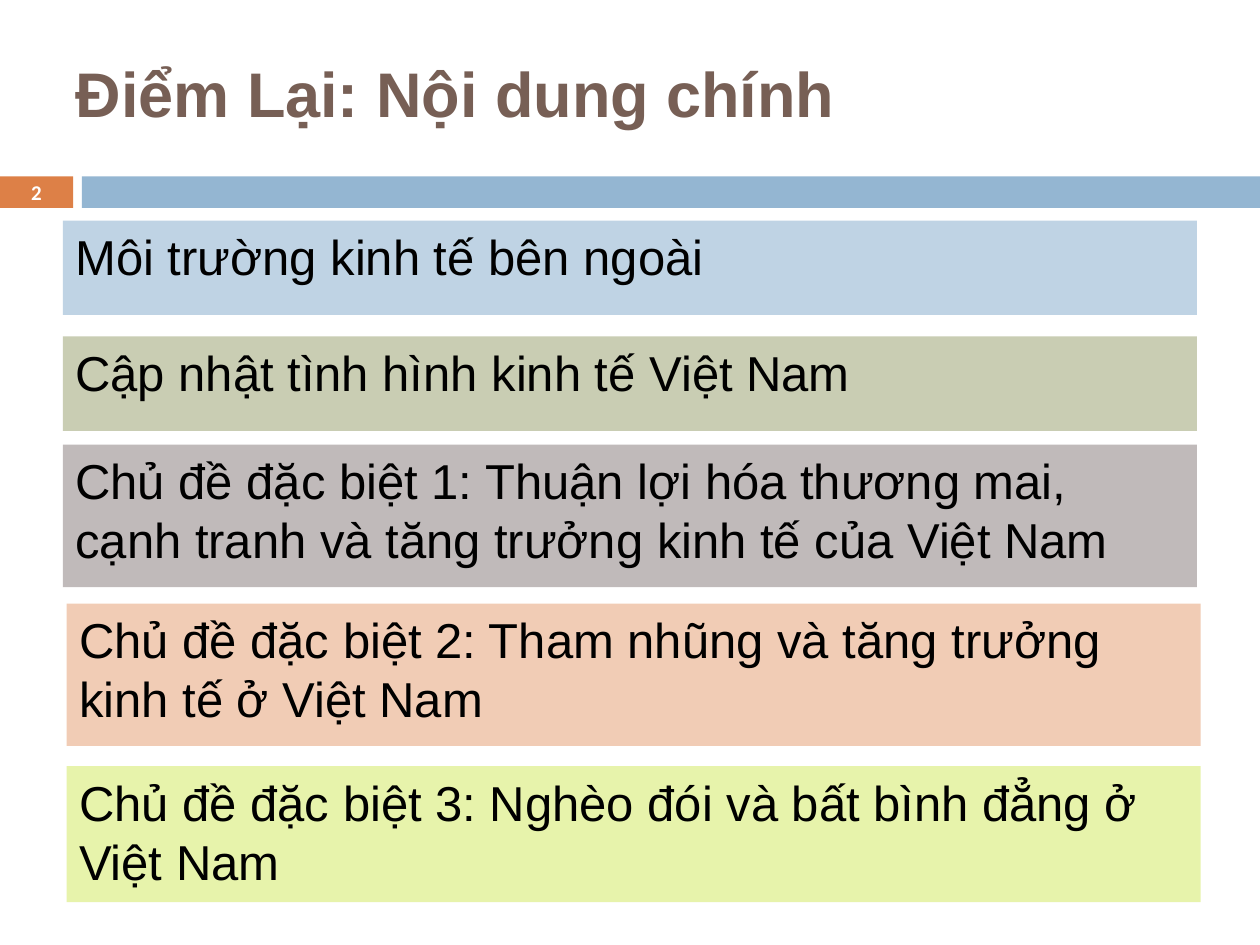
from dataclasses import dataclass

from pptx import Presentation
from pptx.dml.color import RGBColor
from pptx.enum.shapes import MSO_SHAPE
from pptx.enum.text import MSO_ANCHOR, MSO_AUTO_SIZE, PP_ALIGN
from pptx.util import Inches, Pt

RECTANGLE = MSO_SHAPE.RECTANGLE
TOP, MIDDLE = MSO_ANCHOR.TOP, MSO_ANCHOR.MIDDLE
LEFT, CENTER = PP_ALIGN.LEFT, PP_ALIGN.CENTER
NO_AUTOFIT = MSO_AUTO_SIZE.NONE
TITLE_ONLY = 5


@dataclass(frozen=True)
class Theme:
    heading: str = "775F55"
    body: str = "000000"
    number: str = "FFFFFF"
    number_tab: str = "DD8047"
    rule: str = "94B6D2"
    topic_fills: tuple = ("BFD3E4", "C9CDB3", "C0BABA", "F1CCB5", "E7F3AB")
    body_font: str = "Arial"
    number_font: str = "Calibri"
    title_size: float = 36
    topic_size: float = 28
    number_size: float = 12


class SlideBuilder:
    def __init__(self, slide, theme):
        self.slide = slide
        self.theme = theme

    def set_text(self, shape, text, anchor=TOP, align=LEFT, **font_format):
        frame = shape.text_frame
        frame.text = text
        frame_format = {"word_wrap": True, "auto_size": NO_AUTOFIT,
                        "vertical_anchor": anchor}
        for name, value in frame_format.items():
            setattr(frame, name, value)
        paragraph = frame.paragraphs[0]
        paragraph.alignment = align
        font = paragraph.runs[0].font
        font.color.rgb = RGBColor.from_string(font_format.pop("color"))
        for name, value in font_format.items():
            setattr(font, name, value)

    def title(self, text, left, top, width, height):
        title = self.slide.shapes.title
        box = {"left": left, "top": top, "width": width, "height": height}
        for name, value in box.items():
            setattr(title, name, Inches(value))
        self.set_text(title, text, MIDDLE, color=self.theme.heading, bold=True,
                      name=self.theme.body_font, size=Pt(self.theme.title_size))

    def bar(self, left, top, width, height, fill):
        bar = self.slide.shapes.add_shape(
            RECTANGLE, Inches(left), Inches(top), Inches(width), Inches(height))
        bar.shadow.inherit = False
        bar.fill.solid()
        bar.fill.fore_color.rgb = RGBColor.from_string(fill)
        bar.line.fill.background()
        return bar

    def topic(self, text, left, top, width, height, fill):
        topic = self.bar(left, top, width, height, fill)
        self.set_text(topic, text, color=self.theme.body,
                      name=self.theme.body_font, size=Pt(self.theme.topic_size))

    def slide_number(self, text, left, top, width, height):
        tab = self.bar(left, top, width, height, self.theme.number_tab)
        for side in ("margin_top", "margin_bottom"):
            setattr(tab.text_frame, side, 0)
        self.set_text(tab, text, MIDDLE, CENTER, color=self.theme.number, bold=True,
                      name=self.theme.number_font, size=Pt(self.theme.number_size))


# Text, left, top and height of each topic
TOPICS = (
    ("Môi trường kinh tế bên ngoài", 0.5, 1.75, 0.75),
    ("Cập nhật tình hình kinh tế Việt Nam", 0.5, 2.67, 0.75),
    ("Chủ đề đặc biệt 1: Thuận lợi hóa thương mai, cạnh tranh và "
     "tăng trưởng kinh tế của Việt Nam", 0.5, 3.53, 1.13),
    ("Chủ đề đặc biệt 2: Tham nhũng và tăng trưởng kinh tế ở Việt Nam",
     0.53, 4.79, 1.13),
    ("Chủ đề đặc biệt 3: Nghèo đói và bất bình đẳng ở Việt Nam",
     0.53, 6.08, 1.08),
)
CONTENT_WIDTH = 9


def main():
    presentation = Presentation()
    presentation.slide_width = Inches(10)
    presentation.slide_height = Inches(7.5)
    slide = presentation.slides.add_slide(presentation.slide_layouts[TITLE_ONLY])
    theme = Theme()
    builder = SlideBuilder(slide, theme)

    # Heading, with the slide number and rule below it
    builder.title("Điểm Lại: Nội dung chính", 0.5, 0.3, CONTENT_WIDTH, 0.87)
    builder.slide_number("2", 0, 1.4, 0.58, 0.25)
    builder.bar(0.65, 1.4, 9.35, 0.25, theme.rule)

    # Topic bands
    for (text, left, top, height), fill in zip(TOPICS, theme.topic_fills):
        builder.topic(text, left, top, CONTENT_WIDTH, height, fill)

    presentation.save("out.pptx")


if __name__ == "__main__":
    main()
